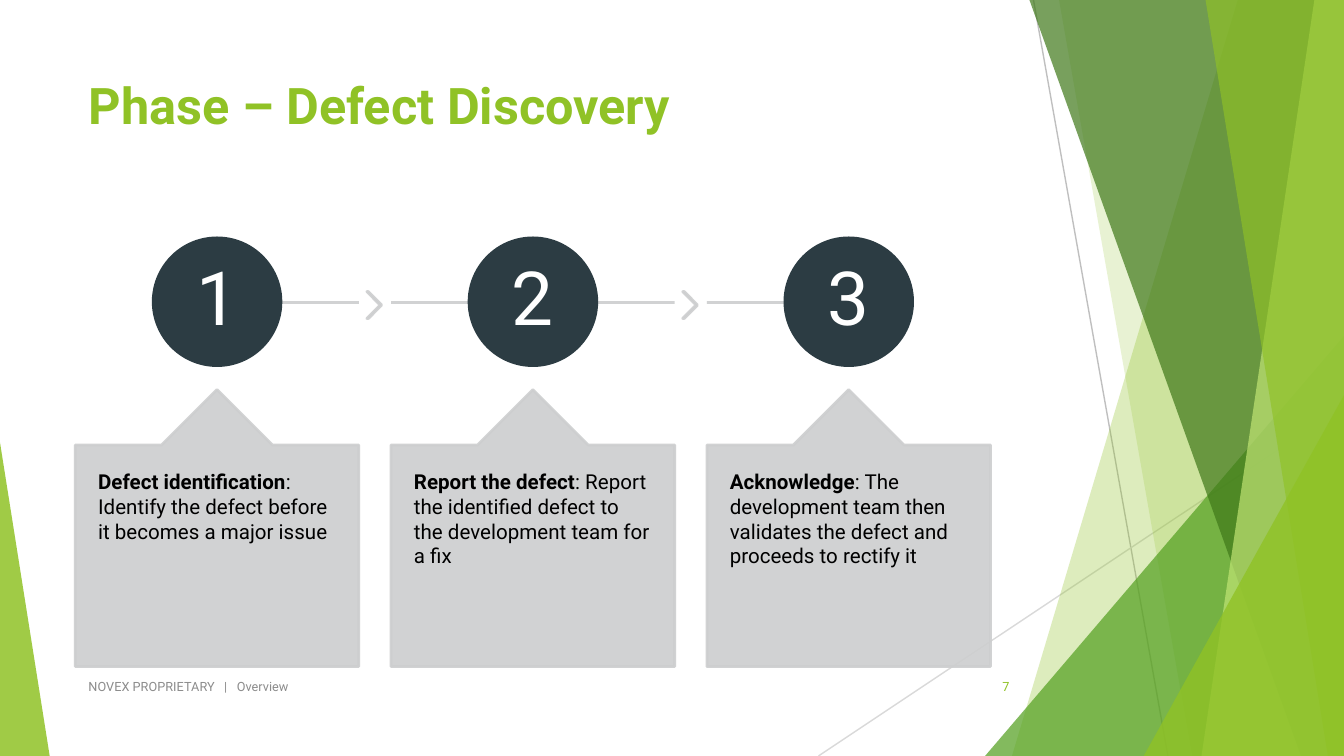
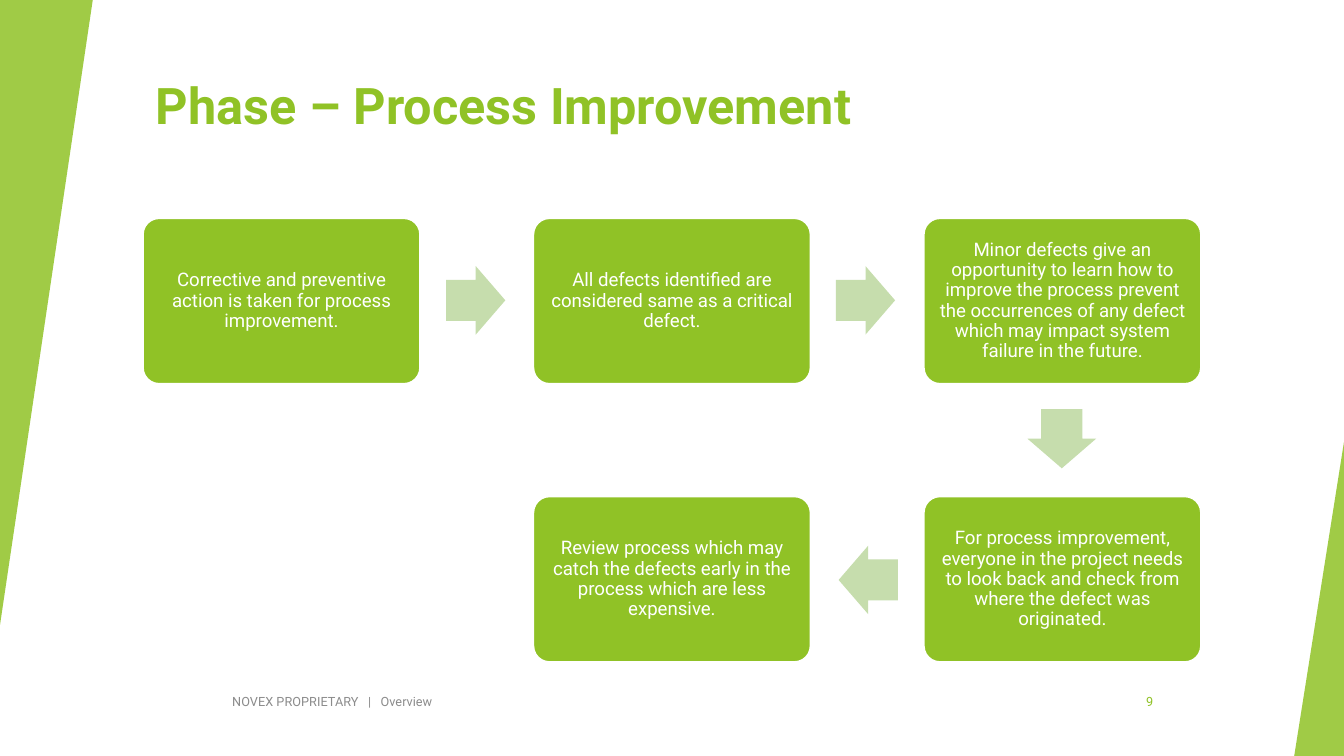
from lxml import etree
from pptx import Presentation
from pptx.dml.color import RGBColor
from pptx.enum import shapes, text
from pptx.oxml import ns
from pptx.util import Inches, Pt

WIDTH = 10
HEIGHT = WIDTH * 9 / 16
FONT = "Roboto"
FOOTER = "NOVEX PROPRIETARY   |   Overview"

GREEN = RGBColor(0x90, 0xC2, 0x26)
MID_GREEN = RGBColor(0x54, 0xA0, 0x21)
DARK_GREEN = RGBColor(0x3F, 0x78, 0x19)
LIGHT_GREEN = RGBColor(0xC0, 0xE4, 0x74)
ARROW_GREEN = RGBColor(0xC6, 0xDD, 0xAD)
SLATE = RGBColor(0x2C, 0x3C, 0x43)
SILVER = RGBColor(0xCD, 0xCE, 0xCF)
RULE_DARK = RGBColor(0xBF, 0xBF, 0xBF)
RULE_LIGHT = RGBColor(0xD9, 0xD9, 0xD9)
FOOTER_GRAY = RGBColor(0x8C, 0x8C, 0x8C)
BLACK = RGBColor(0, 0, 0)
WHITE = RGBColor(0xFF, 0xFF, 0xFF)

SHAPE = shapes.MSO_SHAPE
LEFT, CENTER, RIGHT = text.PP_ALIGN.LEFT, text.PP_ALIGN.CENTER, text.PP_ALIGN.RIGHT
TOP, MIDDLE = text.MSO_ANCHOR.TOP, text.MSO_ANCHOR.MIDDLE


class Deck:
    """Holds the presentation, its style and the current slide."""

    def __init__(self):
        self.presentation = Presentation()
        self.presentation.slide_width = Inches(WIDTH)
        self.presentation.slide_height = Inches(HEIGHT)
        self.slide = None

    def add_slide(self):
        layout = self.presentation.slide_layouts[5]
        self.slide = self.presentation.slides.add_slide(layout)

    def title(self, words, left, width, height):
        title = self.slide.shapes.title
        title.left, title.top = Inches(left), Inches(0.5)
        title.width, title.height = Inches(width), Inches(height)
        self.set_text(title, [(words, True)], 27, GREEN, LEFT, TOP)

    def set_text(self, shape, runs, size, color, align=CENTER, anchor=MIDDLE,
                 insets=(0.1, 0.05), spacing=None):
        """Fill a shape with one paragraph made of (words, bold) runs."""
        frame = shape.text_frame
        frame.word_wrap = True
        frame.auto_size = text.MSO_AUTO_SIZE.NONE
        frame.vertical_anchor = anchor
        frame.margin_left = frame.margin_right = Inches(insets[0])
        frame.margin_top = frame.margin_bottom = Inches(insets[1])
        paragraph = frame.paragraphs[0]
        paragraph.alignment = align
        if spacing:
            paragraph.line_spacing = spacing
        for words, bold in runs:
            run = paragraph.add_run()
            run.text = words
            run.font.name, run.font.size = FONT, Pt(size)
            run.font.bold = bold
            run.font.color.rgb = color

    def label(self, words, left, top, width, color, align=LEFT):
        box = self.slide.shapes.add_textbox(
            Inches(left), Inches(top), Inches(width), Inches(0.3))
        self.set_text(box, [(words, False)], 6.8, color, align)

    def footer(self, number, left, top, number_left):
        self.label(FOOTER, left, top, 5.17, FOOTER_GRAY)
        self.label(number, number_left, top, 0.56, GREEN, RIGHT)

    def fade(self, shape, opacity):
        """Make every colour of a shape partly transparent."""
        for color in shape.element.spPr.iter(ns.qn("a:srgbClr")):
            alpha = etree.SubElement(color, ns.qn("a:alpha"))
            alpha.set("val", str(opacity * 1000))

    def paint(self, shape, fill, line=None, opacity=100):
        shape.shadow.inherit = False
        shape.fill.solid()
        shape.fill.fore_color.rgb = fill
        if line is None:
            shape.line.fill.background()
        else:
            shape.line.color.rgb = line
            shape.line.width = Pt(1.5)
        if opacity < 100:
            self.fade(shape, opacity)
        return shape

    def shape(self, kind, left, top, width, height, fill, line=None,
              opacity=100, adjustments=(), rotation=0):
        shape = self.slide.shapes.add_shape(
            kind, Inches(left), Inches(top), Inches(width), Inches(height))
        for index, value in enumerate(adjustments):
            shape.adjustments[index] = value
        shape.rotation = rotation
        return self.paint(shape, fill, line, opacity)

    def triangle(self, left, top, width, height, apex, color=GREEN,
                 opacity=85, rotation=0):
        self.shape(SHAPE.ISOSCELES_TRIANGLE, left, top, width, height, color,
                   opacity=opacity, adjustments=[apex], rotation=rotation)

    def facet(self, top_left, bottom_left, color, opacity):
        """Full-height panel reaching from a slanted edge to the right side."""
        builder = self.slide.shapes.build_freeform(Inches(top_left), 0)
        corners = [(WIDTH, 0), (WIDTH, HEIGHT), (bottom_left, HEIGHT)]
        builder.add_line_segments([(Inches(x), Inches(y)) for x, y in corners])
        self.paint(builder.convert_to_shape(), color, opacity=opacity)

    def line(self, start, end, color, width, opacity=100):
        connector = self.slide.shapes.add_connector(
            shapes.MSO_CONNECTOR.STRAIGHT,
            *(Inches(value) for value in (*start, *end)))
        connector.line.color.rgb = color
        connector.line.width = Pt(width)
        if opacity < 100:
            self.fade(connector, opacity)
        etree.SubElement(connector.element.spPr, ns.qn("a:effectLst"))

    def facets(self):
        self.line((7.69, 0), (8.69, HEIGHT), RULE_DARK, 0.75)
        self.line((10, 3.02), (6.09, HEIGHT), RULE_LIGHT, 0.75)
        self.facet(9.21, 7.53, GREEN, 30)
        self.facet(7.88, 8.87, GREEN, 20)
        self.triangle(7.33, 2.5, 2.67, HEIGHT - 2.5, 1, MID_GREEN, 72)
        self.facet(7.66, 9.68, DARK_GREEN, 70)
        self.facet(9.78, 8.94, LIGHT_GREEN, 70)
        self.facet(8.97, 9.88, GREEN, 65)
        self.triangle(8.51, 2.94, 1.49, HEIGHT - 2.94, 1, GREEN, 80)
        self.triangle(0, 3.29, 0.37, HEIGHT - 3.29, 0)

    def step(self, number, left, heading, body, line_start, line_end, last):
        """Numbered circle on its line, with a callout below."""
        self.line((line_start, 2.25), (line_end, 2.25), SILVER, 1.5, 90)
        if not last:
            self.shape(SHAPE.CHEVRON, left + 2.17, 2.17, 0.11, 0.2, SILVER,
                       SILVER, 90, [0.9])
        circle = self.shape(SHAPE.OVAL, left + 0.58, 1.77, 0.95, 0.95,
                            SLATE, SLATE)
        self.set_text(circle, [(str(number), False)], 40, WHITE,
                      insets=(0.04, 0.04), spacing=0.9)
        callout = self.shape(SHAPE.UP_ARROW_CALLOUT, left, 2.9, 2.11, 2.06,
                             SILVER, SILVER, 90, [0.5, 0.2, 0.2, 1])
        self.set_text(callout, [(heading, True), (": " + body, False)], 11,
                      BLACK, LEFT, TOP, (0.17, 0.18))

    def card(self, words, left, top):
        card = self.shape(SHAPE.ROUNDED_RECTANGLE, left, top, 2.07, 1.24,
                          GREEN, WHITE, adjustments=[0.1])
        self.set_text(card, [(words, False)], 10, WHITE,
                      insets=(0.04, 0.04), spacing=0.9)

    def arrow(self, left, top, rotation):
        self.shape(SHAPE.RIGHT_ARROW, left, top, 0.44, 0.51, ARROW_GREEN,
                   adjustments=[0.6, 0.5], rotation=rotation)


def add_discovery(deck):
    deck.add_slide()
    deck.facets()
    deck.title("Phase – Defect Discovery", 0.56, 7.05, 1.08)
    deck.footer("7", 0.56, 4.96, 7.05)

    # Three steps at equal distances
    steps = [
        ("Defect identification",
         "Identify the defect before it becomes a major issue"),
        ("Report the defect",
         "Report the identified defect to the development team for a fix"),
        ("Acknowledge",
         "The development team then validates the defect and proceeds to "
         "rectify it"),
    ]
    for index, (heading, body) in enumerate(steps):
        left = 0.56 + 2.35 * index
        last = index == len(steps) - 1
        line_start = left if index else left + 1.17
        line_end = left + (1.06 if last else 2.11)
        deck.step(index + 1, left, heading, body, line_start, line_end, last)


def add_improvement(deck):
    deck.add_slide()
    deck.title("Phase – Process Improvement", 1.06, 8.36, 0.9)

    # Side bands and footer
    deck.triangle(0, 0, 0.69, 4.65, 1, rotation=180)
    deck.footer("9", 1.63, 5.07, 8.12)
    deck.triangle(9.63, 3.29, 0.37, HEIGHT - 3.29, 1)

    # Cards by column and row, in the order of the flow
    cards = [
        (0, 0, "Corrective and preventive action is taken for process "
               "improvement."),
        (1, 0, "All defects identified are considered same as a critical "
               "defect."),
        (2, 0, "Minor defects give an opportunity to learn how to improve the "
               "process prevent the occurrences of any defect which may impact "
               "system failure in the future."),
        (2, 1, "For process improvement, everyone in the project needs to look "
               "back and check from where the defect was originated."),
        (1, 1, "Review process which may catch the defects early in the "
               "process which are less expensive."),
    ]
    for column, row, words in cards:
        deck.card(words, 1.06 + 5.81 * column / 2, 1.62 + 2.07 * row)

    # Arrows between the cards
    for left, top, rotation in [(3.32, 1.98, 0), (6.22, 1.98, 0),
                                (7.68, 3.01, 90), (6.24, 4.06, 180)]:
        deck.arrow(left, top, rotation)


def main():
    deck = Deck()
    add_discovery(deck)
    add_improvement(deck)
    deck.presentation.save("out.pptx")


if __name__ == "__main__":
    main()
